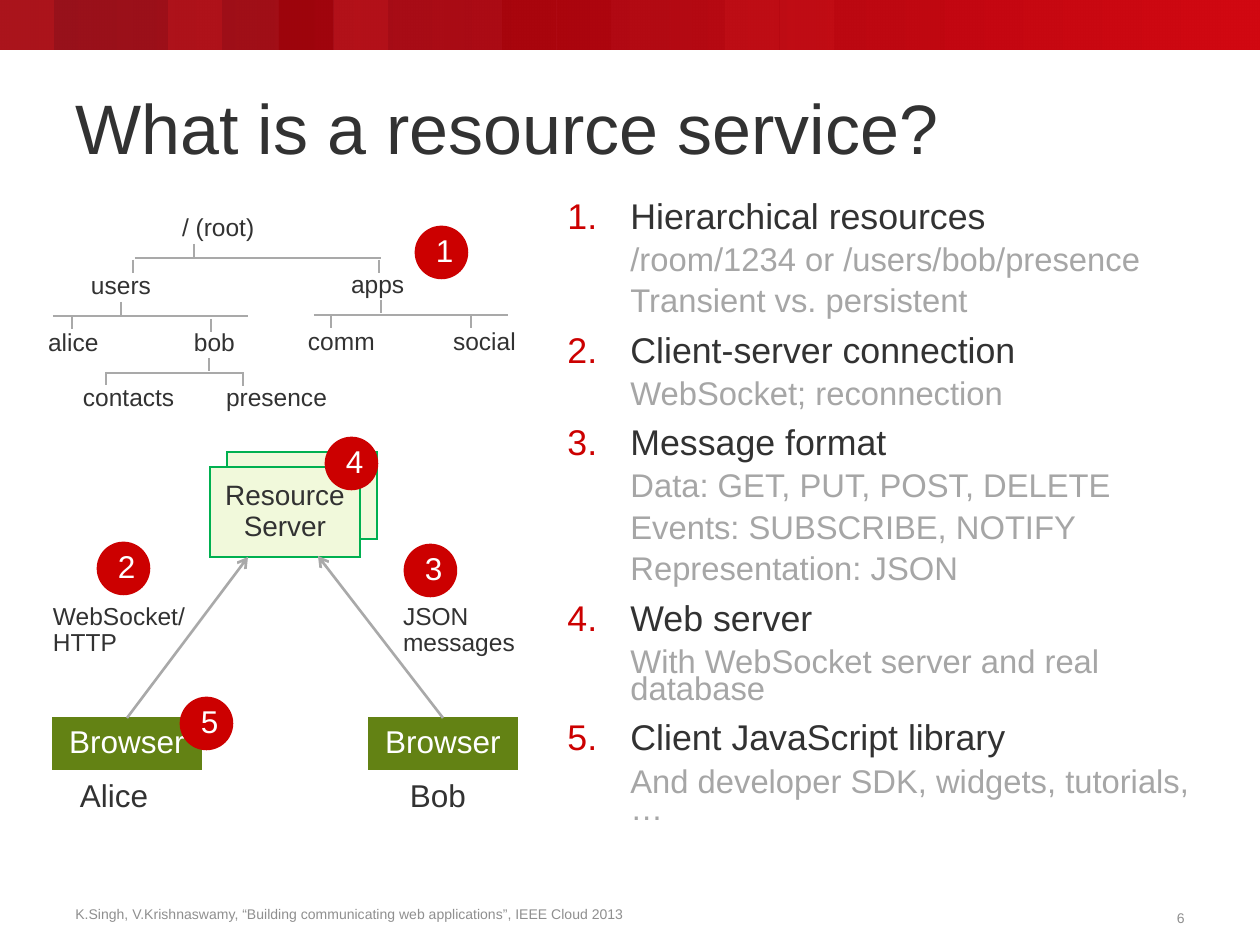
from pptx import Presentation
from pptx.dml.color import RGBColor
from pptx.enum.shapes import MSO_CONNECTOR, MSO_SHAPE
from pptx.enum.text import MSO_ANCHOR, PP_ALIGN
from pptx.oxml.ns import qn
from pptx.util import Pt
from lxml.etree import SubElement

EMU = 914400 / 126
INK, GREY, RED, WHITE = "323232", "A9A9A9", "CC0000", "FFFFFF"
DIM, FOOT, GREEN, MINT, OLIVE = "A6A6A6", "8F8F8F", "00B050", "F1F9DB", "638214"

TITLE = "What is a resource service?"
CITE = "K.Singh, V.Krishnaswamy, “Building communicating web applications”, IEEE Cloud 2013"
TOPICS = [
    ("Hierarchical resources", ["/room/1234 or /users/bob/presence", "Transient vs. persistent"]),
    ("Client-server connection", ["WebSocket; reconnection"]),
    ("Message format", ["Data: GET, PUT, POST, DELETE", "Events: SUBSCRIBE, NOTIFY",
                        "Representation: JSON"]),
    ("Web server", ["With WebSocket server and real database"]),
    ("Client JavaScript library", ["And developer SDK, widgets, tutorials, …"]),
]
# banner tiles: left edge, colour
TILES = [(780, "FF4747"), (725, "FF4747"), (557, "990000"), (502, "990000"),
         (334, "FF4747"), (279, "990000"), (168, "FF4747"), (0, "FF4747")]
# tree nodes: text, left, top, width
NODES = [("/ (root)", 182, 215, 82), ("users", 91, 273, 67), ("apps", 351, 272, 67),
         ("alice", 48, 330, 58), ("bob", 194, 330, 50), ("comm", 308, 329, 75),
         ("social", 453, 329, 71), ("contacts", 83, 385, 100), ("presence", 226, 385, 110)]
# tree branches: left, right, height of the bar, then (x, top) of each tick
BRANCHES = [(135, 381, 258, [(194, 244), (133, 260), (379, 260)]),
            (53, 248, 316, [(121, 302), (72, 316), (211, 319)]),
            (106, 244, 373, [(209, 358), (106, 372), (243, 373)]),
            (314, 508, 315, [(381, 300), (331, 315), (471, 315)])]
TICK = 13
# browsers: left edge, arrow target, user, left edge of the user's name
USERS = [(53, (248, 557), "Alice", 80), (369, (318, 556), "Bob", 410)]
NOTES = [(["WebSocket/", "HTTP"], 53, 604), (["JSON messages"], 403, 604)]
BADGES = [(416, 227), (98, 543), (405, 545), (326, 438), (181, 698)]

deck = Presentation()
deck.slide_width, deck.slide_height = (round(n * EMU) for n in (1260, 945))
slide = deck.slides.add_slide(deck.slide_layouts[6])
shapes = slide.shapes


def px(*vals):
    return [round(v * EMU) for v in vals]


def rgb(code):
    return RGBColor.from_string(code)


def write(para, text, size=14, color=INK, align=PP_ALIGN.LEFT, space=0.9, before=0):
    para.alignment, para.line_spacing, para.space_before = align, space, Pt(before)
    run = para.add_run()
    run.text = text
    run.font.size, run.font.name = Pt(size), "Arial"
    run.font.color.rgb = rgb(color)


def label(lines, box, inset=None, wrap=True, anchor=MSO_ANCHOR.TOP, **fmt):
    frame = shapes.add_textbox(*px(*box)).text_frame
    frame.word_wrap, frame.vertical_anchor = wrap, anchor
    if inset is not None:
        frame.margin_left = frame.margin_right = inset
        frame.margin_top = frame.margin_bottom = inset
    for i, line in enumerate(lines):
        write(frame.add_paragraph() if i else frame.paragraphs[0], line, **fmt)
    return frame


def block(box, fill=None, line=None, text=None, kind=MSO_SHAPE.RECTANGLE, **fmt):
    shape = shapes.add_shape(kind, *px(*box))
    shape.shadow.inherit = False
    if fill:
        shape.fill.solid()
        shape.fill.fore_color.rgb = rgb(fill)
    if line:
        shape.line.color.rgb = rgb(line)
        shape.line.width = Pt(1.5)
        SubElement(shape._element.spPr.find(qn("a:ln")), qn("a:miter"), lim="800000")
    else:
        shape.line.fill.background()
    if text:
        frame = shape.text_frame
        frame.word_wrap, frame.vertical_anchor = True, MSO_ANCHOR.MIDDLE
        write(frame.paragraphs[0], text, align=PP_ALIGN.CENTER, **fmt)
    return shape


def link(x1, y1, x2, y2):
    wire = shapes.add_connector(MSO_CONNECTOR.STRAIGHT, *px(x1, y1, x2, y2))
    wire.line.color.rgb = rgb(GREY)
    wire.line.width = Pt(1.5)
    SubElement(wire._element.spPr, qn("a:effectLst"))
    return wire


def glaze():
    """Lay the red gradient, see-through at its left end, over the banner."""
    fill = block((0, -1, 1260, 51)).fill
    fill.gradient()
    fill.gradient_angle = 0
    for stop, code in zip(fill.gradient_stops, ("91050F", "D10811")):
        stop.color.rgb = rgb(code)
    first = next(fill._xPr.iter(qn("a:srgbClr")))
    SubElement(first, qn("a:alpha"), val="76000")


def number(para):
    """Hang a topic line and give it a red automatic number."""
    props = para._p.get_or_add_pPr()
    props.set("indent", "-457200")
    SubElement(SubElement(props, qn("a:buClr")), qn("a:srgbClr"), val=RED)
    SubElement(props, qn("a:buFont"), typeface="Arial")
    SubElement(props, qn("a:buAutoNum"), type="arabicPeriod")


# Banner, title and footer
glaze()
for left, code in TILES:
    block((left, -1, 54, 51), code)
glaze()
label([CITE], (63, 901, 582, 28), wrap=False, anchor=MSO_ANCHOR.MIDDLE, size=8, color=FOOT)
label(["6"], (1154, 905, 43, 28), wrap=False, anchor=MSO_ANCHOR.MIDDLE, size=8, color=FOOT,
      align=PP_ALIGN.RIGHT)
label([TITLE], (63, 60, 1134, 116), anchor=MSO_ANCHOR.BOTTOM, size=40)

# Numbered topics
body = label([], (555, 199, 649, 651))
for i, (topic, details) in enumerate(TOPICS):
    para = body.add_paragraph() if i else body.paragraphs[0]
    write(para, topic, size=20.4, space=0.7, before=12)
    para._p.get_or_add_pPr().set("marL", "457200")
    number(para)
    for detail in details:
        para = body.add_paragraph()
        para.level = 1
        write(para, detail, size=18.7, color=DIM, space=0.7, before=8)
        para._p.get_or_add_pPr().set("marL", "457200")

# Server and browsers
block((227, 452, 150, 87), MINT, GREEN)
block((210, 467, 150, 90), MINT, GREEN, "Resource Server", size=16)
for left, goal, user, name in USERS:
    box = block((left, 718, 148, 51), OLIVE, OLIVE, "Browser", size=18, color=WHITE)
    wire = link(left + 74, 718, *goal)
    wire.begin_connect(box, 0)
    SubElement(wire._element.spPr.find(qn("a:ln")), qn("a:tailEnd"), type="arrow")
    label([user], (name, 780, 91, 34), inset=0, size=18)
for lines, left, top in NOTES:
    label(lines, (left, top, 134, 53), inset=0)

# Resource tree
for text, left, top, width in NODES:
    label([text], (left, top, width, 26), inset=0)
for left, right, bar, ticks in BRANCHES:
    link(left, bar, right, bar)
    for x, top in ticks:
        link(x, top, x, top + TICK)

for i, (left, top) in enumerate(BADGES, 1):
    block((left, top, 51, 51), RED, RED, str(i), MSO_SHAPE.OVAL, size=18, color=WHITE)

deck.save("out.pptx")
